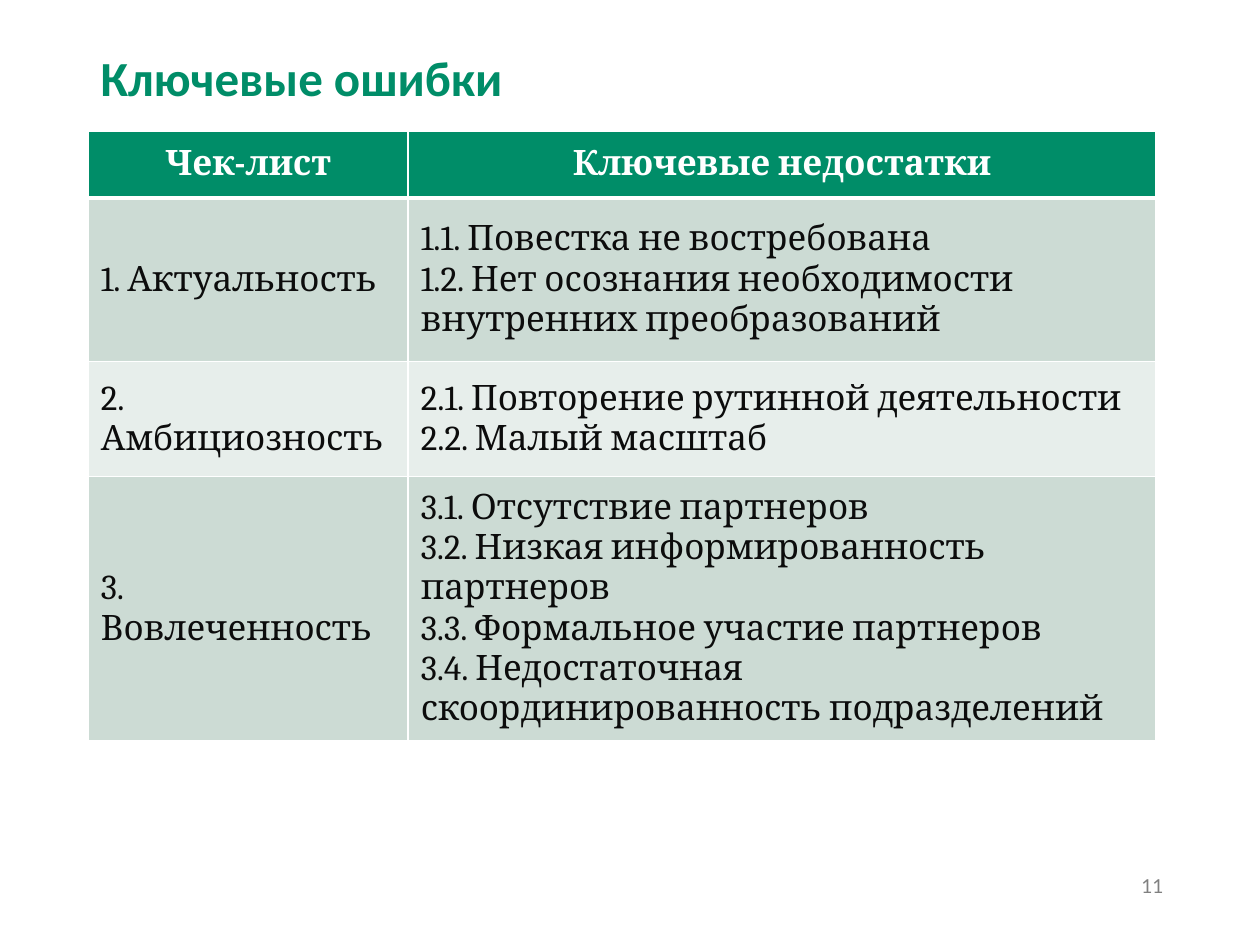
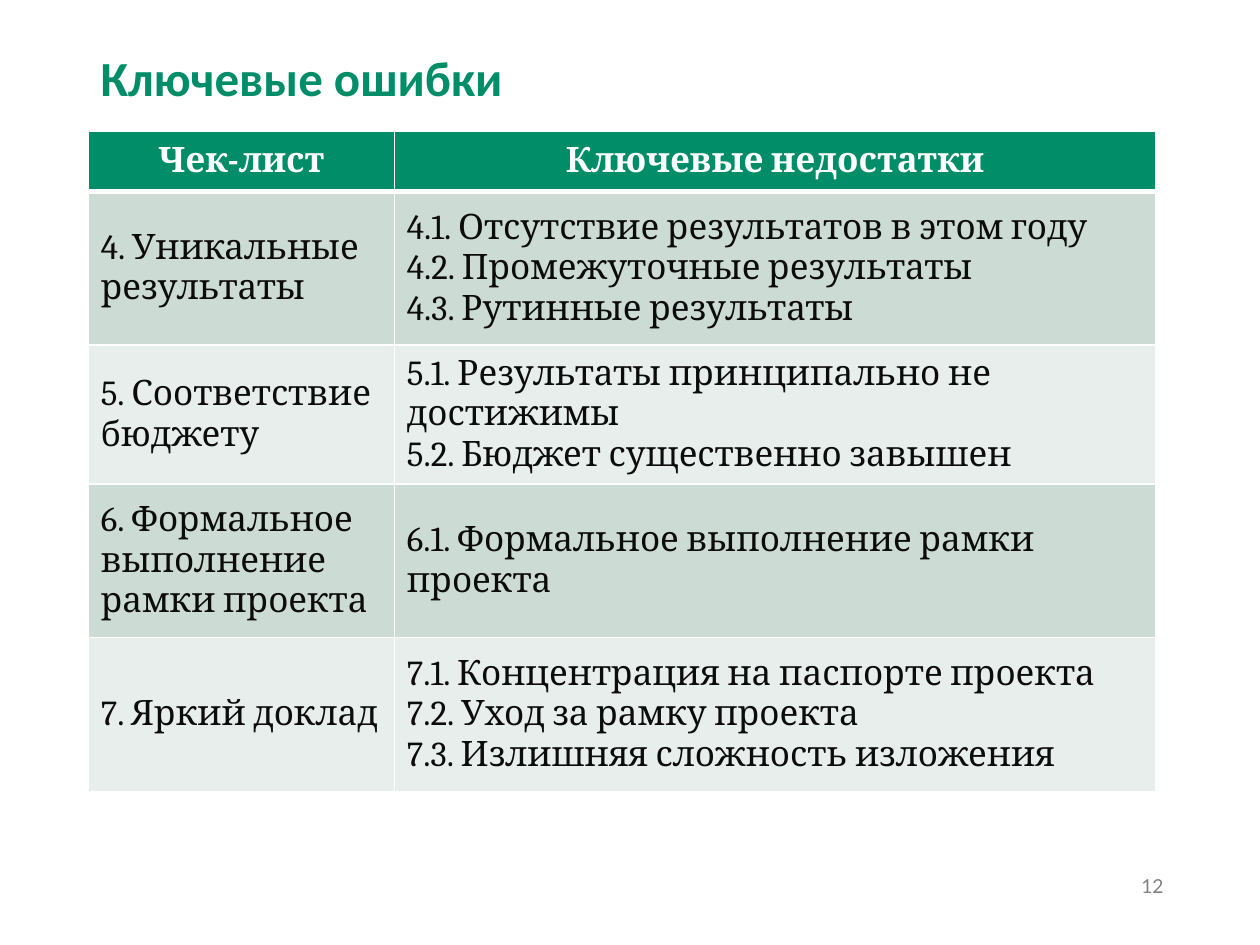
from dataclasses import dataclass

from lxml import etree
from pptx import Presentation
from pptx.dml.color import RGBColor
from pptx.enum.text import MSO_ANCHOR, PP_ALIGN
from pptx.oxml.ns import qn
from pptx.util import Inches, Pt

TOP, MIDDLE = MSO_ANCHOR.TOP, MSO_ANCHOR.MIDDLE
LEFT, CENTER = PP_ALIGN.LEFT, PP_ALIGN.CENTER


@dataclass(frozen=True)
class Style:
    font: str
    size: int
    color: str
    bold: bool = False


@dataclass(frozen=True)
class Theme:
    green: str = "008D68"
    bands: tuple = ("CCDBD4", "E7EEEB")
    rule: str = "FFFFFF"
    thin: int = 1
    thick: int = 3
    title: Style = Style("Calibri", 28, "008D68", True)
    head: Style = Style("Cambria", 20, "FFFFFF", True)
    body: Style = Style("Cambria", 20, "0C0C0C")
    number: Style = Style("Lato", 11, "808080")


THEME = Theme()
TITLE = "Ключевые ошибки"
HEADS = ("Чек-лист", ["Ключевые недостатки"])

# Boxes: left, top, width, height in inches
TITLE_BOX = (0.7, 0.3, 8.59, 0.54)
NUMBER_BOX = (8.96, 6.89, 0.43, 0.28)
TABLE_BOX = (0.7, 1.04, 8.47)

# Each page: number, first column width, row heights, checklist rows
PAGES = [
    (11, 2.54, (0.53, 1.3, 0.91, 2.09), [
        ("1. Актуальность", [
            "1.1. Повестка не востребована",
            "1.2. Нет осознания необходимости внутренних преобразований"]),
        ("2. Амбициозность", [
            "2.1. Повторение рутинной деятельности",
            "2.2. Малый масштаб"]),
        ("3. Вовлеченность", [
            "3.1. Отсутствие партнеров",
            "3.2. Низкая информированность партнеров",
            "3.3. Формальное участие партнеров",
            "3.4. Недостаточная скоординированность подразделений"]),
    ]),
    (12, 2.43, (0.48, 1.22, 0.85, 1.22, 1.22), [
        ("4. Уникальные результаты", [
            "4.1. Отсутствие результатов в этом году",
            "4.2. Промежуточные результаты",
            "4.3. Рутинные результаты"]),
        ("5. Соответствие бюджету", [
            "5.1. Результаты принципально не достижимы",
            "5.2. Бюджет существенно завышен"]),
        ("6. Формальное выполнение рамки проекта", [
            "6.1. Формальное выполнение рамки проекта"]),
        ("7. Яркий доклад", [
            "7.1. Концентрация на паспорте проекта",
            "7.2. Уход за рамку проекта",
            "7.3. Излишняя сложность изложения"]),
    ]),
]


def write(frame, lines, style, align=LEFT):
    frame.text = "\n".join(lines)
    for para in frame.paragraphs:
        para.alignment = align
        font = para.font
        font.name, font.size, font.bold = style.font, Pt(style.size), style.bold
        font.color.rgb = RGBColor.from_string(style.color)


def add_label(slide, box, text, style, anchor, inset):
    frame = slide.shapes.add_textbox(*map(Inches, box)).text_frame
    frame.word_wrap = True
    frame.vertical_anchor = anchor
    frame.margin_top = frame.margin_bottom = Inches(inset)
    write(frame, [text], style)


def add_rules(cell, top, bottom):
    """Draw the four borders of a cell; they must precede its fill."""
    props = cell._tc.get_or_add_tcPr()
    sides = {"L": THEME.thin, "R": THEME.thin, "T": top, "B": bottom}
    for side, width in sides.items():
        line = etree.SubElement(props, qn(f"a:ln{side}"), w=str(Pt(width)))
        fill = etree.SubElement(line, qn("a:solidFill"))
        etree.SubElement(fill, qn("a:srgbClr"), val=THEME.rule)


def fill_cell(cell, lines, row):
    head = row == 0
    add_rules(cell, THEME.thick if row == 1 else THEME.thin,
              THEME.thick if head else THEME.thin)
    color = THEME.green if head else THEME.bands[(row - 1) % 2]
    cell.fill.solid()
    cell.fill.fore_color.rgb = RGBColor.from_string(color)
    cell.vertical_anchor = MIDDLE
    write(cell.text_frame, lines, THEME.head if head else THEME.body,
          CENTER if head else LEFT)


def add_checklist(slide, box, first, heights, items):
    left, top, width = box
    rows = [HEADS, *items]
    table = slide.shapes.add_table(
        len(rows), 2, Inches(left), Inches(top),
        Inches(width), Inches(sum(heights))).table
    table.columns[0].width = Inches(first)
    table.columns[1].width = Inches(width - first)
    for row, (name, flaws) in enumerate(rows):
        table.rows[row].height = Inches(heights[row])
        fill_cell(table.cell(row, 0), [name], row)
        fill_cell(table.cell(row, 1), flaws, row)


def add_page(deck, number, first, heights, items):
    slide = deck.slides.add_slide(deck.slide_layouts[6])
    # Page number
    add_label(slide, NUMBER_BOX, str(number), THEME.number, MIDDLE, 0.05)
    # Title
    add_label(slide, TITLE_BOX, TITLE, THEME.title, TOP, 0.08)
    # Checklist table
    add_checklist(slide, TABLE_BOX, first, heights, items)


def main():
    deck = Presentation()
    deck.slide_width, deck.slide_height = Inches(10), Inches(7.5)
    for page in PAGES:
        add_page(deck, *page)
    deck.save("out.pptx")


if __name__ == "__main__":
    main()
